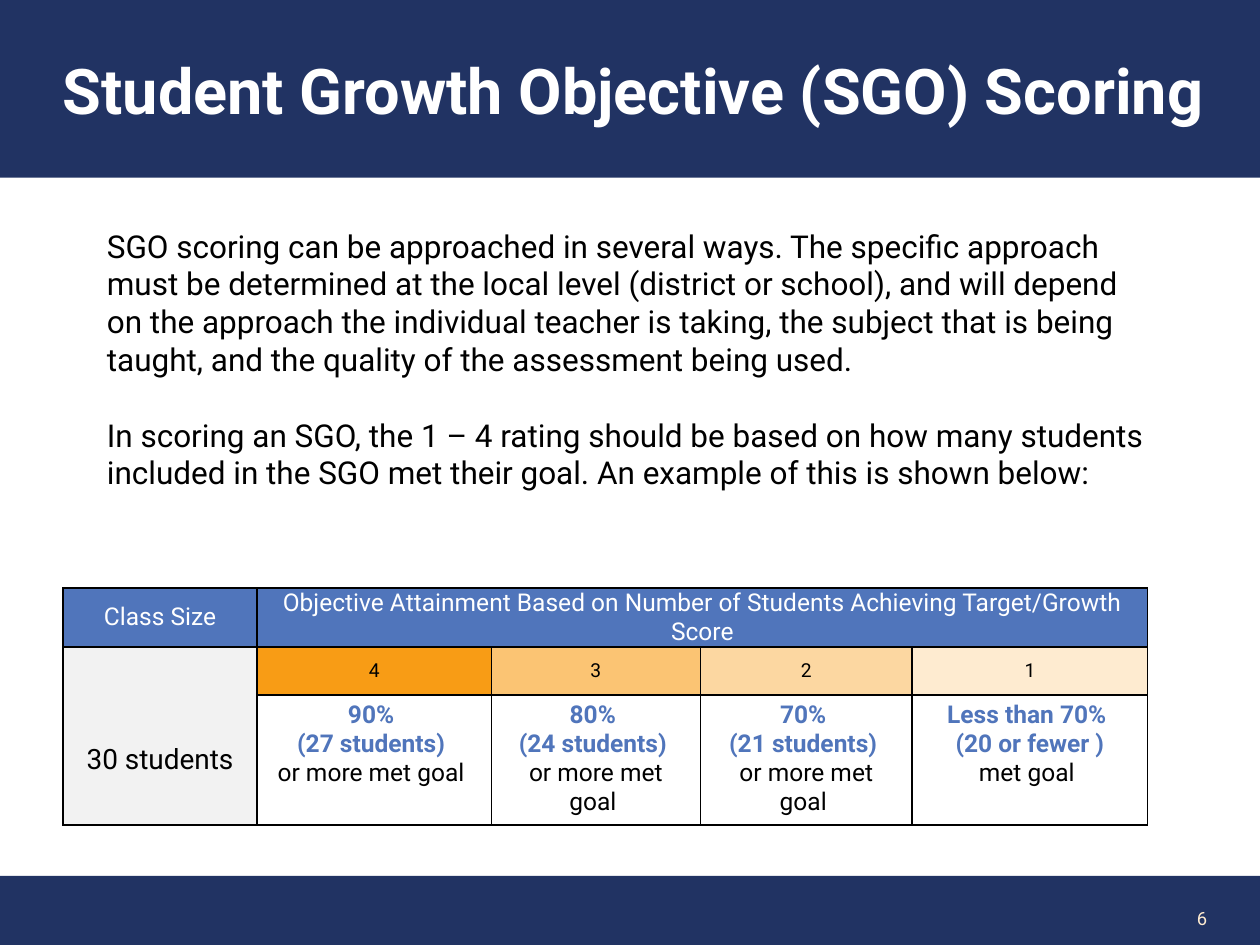
from dataclasses import dataclass

from lxml import etree
from pptx import Presentation
from pptx.dml.color import RGBColor
from pptx.enum.shapes import MSO_SHAPE
from pptx.enum.text import MSO_ANCHOR, PP_ALIGN
from pptx.oxml.ns import qn
from pptx.slide import Slide
from pptx.util import Pt

RECTANGLE = MSO_SHAPE.RECTANGLE
TOP, MIDDLE = MSO_ANCHOR.TOP, MSO_ANCHOR.MIDDLE
LEFT, CENTER, RIGHT = PP_ALIGN.LEFT, PP_ALIGN.CENTER, PP_ALIGN.RIGHT

NAVY = RGBColor(0x21, 0x33, 0x63)
BLUE = RGBColor(0x50, 0x75, 0xBB)
CREAM = RGBColor(0xFE, 0xEB, 0xD0)
GRAY = RGBColor(0xF2, 0xF2, 0xF2)
WHITE = RGBColor(0xFF, 0xFF, 0xFF)
BLACK = RGBColor(0, 0, 0)

INTRODUCTION = (
    "SGO scoring can be approached in several ways. The specific approach must be "
    "determined at the local level (district or school), and will depend on the "
    "approach the individual teacher is taking, the subject that is being taught, "
    "and the quality of the assessment being used.",
    "In scoring an SGO, the 1 – 4 rating should be based on how many students "
    "included in the SGO met their goal. An example of this is shown below:",
)
RATINGS = (
    ("4", RGBColor(0xF8, 0x9C, 0x15), ("90% ", "(27 students) "), "or more met goal "),
    ("3", RGBColor(0xFB, 0xC4, 0x73), ("80% ", "(24 students) "), "or more met goal "),
    ("2", RGBColor(0xFC, 0xD7, 0xA1), ("70% ", "(21 students) "), "or more met goal "),
    ("1", CREAM, ("Less than 70% ", "(20 or fewer )"), "met goal "),
)
COLUMN_WIDTHS = (110.9, 133.9, 119.5, 121, 134.6)
ROW_HEIGHTS = (28.1, 27.4, 71.3)


def write(frame, text, font="Roboto", size=14, color=BLACK, bold=False,
          align=LEFT, space_before=0):
    first = frame.paragraphs[0]
    paragraph = frame.add_paragraph() if first.runs else first
    paragraph.alignment = align
    paragraph.space_before = Pt(space_before)
    run = paragraph.add_run()
    run.text = text
    run.font.name = font
    run.font.size = Pt(size)
    run.font.bold = bold
    run.font.color.rgb = color


@dataclass
class SlideBuilder:
    slide: Slide
    font: str = "Roboto"
    border: RGBColor = BLACK
    border_width: float = 1

    def band(self, left, top, width, height, color):
        shape = self.slide.shapes.add_shape(
            RECTANGLE, Pt(left), Pt(top), Pt(width), Pt(height))
        shape.shadow.inherit = False
        shape.fill.solid()
        shape.fill.fore_color.rgb = color
        shape.line.fill.background()
        return shape

    def title(self, text, height):
        frame = self.band(0, 0, 720, height, NAVY).text_frame
        frame.word_wrap = True
        frame.vertical_anchor = MIDDLE
        frame.margin_left = Pt(36)
        write(frame, text, font=self.font, size=36, color=WHITE, bold=True)

    def text(self, left, top, width, height, paragraphs, anchor=TOP, gap=0, **style):
        box = self.slide.shapes.add_textbox(Pt(left), Pt(top), Pt(width), Pt(height))
        frame = box.text_frame
        frame.word_wrap = True
        frame.vertical_anchor = anchor
        for index, text in enumerate(paragraphs):
            write(frame, text, font=self.font, space_before=gap if index else 0, **style)

    def table(self, left, top, widths, heights):
        table = self.slide.shapes.add_table(
            len(heights), len(widths), Pt(left), Pt(top),
            Pt(sum(widths)), Pt(sum(heights))).table
        table.first_row = table.horz_banding = False
        for column, width in zip(table.columns, widths):
            column.width = Pt(width)
        for row, height in zip(table.rows, heights):
            row.height = Pt(height)
        return table

    def cell(self, cell, fill, text="", sides="LRTB", **style):
        self.borders(cell, sides)
        cell.fill.solid()
        cell.fill.fore_color.rgb = fill
        cell.vertical_anchor = MIDDLE
        cell.margin_left = cell.margin_right = Pt(5)
        cell.margin_top = cell.margin_bottom = Pt(0)
        if text:
            write(cell.text_frame, text, font=self.font, align=CENTER, **style)

    def goal_cell(self, cell, highlights, ending):
        self.borders(cell, "LRTB")
        cell.fill.solid()
        cell.fill.fore_color.rgb = WHITE
        for text in highlights:
            write(cell.text_frame, text, font=self.font, color=BLUE, bold=True, align=CENTER)
        write(cell.text_frame, ending, font=self.font, align=CENTER)

    def borders(self, cell, sides):
        properties = cell._tc.get_or_add_tcPr()
        for side in "LRTB":
            visible = side in sides
            width = Pt(self.border_width) if visible else 0
            line = etree.SubElement(properties, qn(f"a:ln{side}"), w=str(width))
            if visible:
                fill = etree.SubElement(line, qn("a:solidFill"))
                etree.SubElement(fill, qn("a:srgbClr"), val=str(self.border))
            else:
                etree.SubElement(line, qn("a:noFill"))


def main():
    presentation = Presentation()
    presentation.slide_width, presentation.slide_height = Pt(720), Pt(540)
    builder = SlideBuilder(presentation.slides.add_slide(presentation.slide_layouts[6]))

    builder.band(0, 500.5, 721.5, 42.5, NAVY)
    builder.text(591.8, 510.5, 105.1, 28.8, ("6",), anchor=MIDDLE,
                 size=10.5, color=CREAM, align=RIGHT)
    builder.title("Student Growth Objective (SGO) Scoring", 101.5)
    builder.text(54, 126, 612, 160, INTRODUCTION, gap=21.6, size=18)

    table = builder.table(36, 336, COLUMN_WIDTHS, ROW_HEIGHTS)
    table.cell(0, 1).merge(table.cell(0, 4))
    builder.cell(table.cell(0, 0), BLUE, "Class Size", color=WHITE)
    builder.cell(table.cell(0, 1), BLUE,
                 "Objective Attainment Based on Number of Students Achieving "
                 "Target/Growth Score", color=WHITE)
    for column in range(2, 5):
        builder.cell(table.cell(0, column), BLUE)
    builder.cell(table.cell(1, 0), GRAY, sides="LRT")
    builder.cell(table.cell(2, 0), GRAY, "30 students", sides="LRB", size=16)
    for column, (rating, color, highlights, ending) in enumerate(RATINGS, start=1):
        builder.cell(table.cell(1, column), color, rating, size=11)
        builder.goal_cell(table.cell(2, column), highlights, ending)

    presentation.save("out.pptx")


if __name__ == "__main__":
    main()
